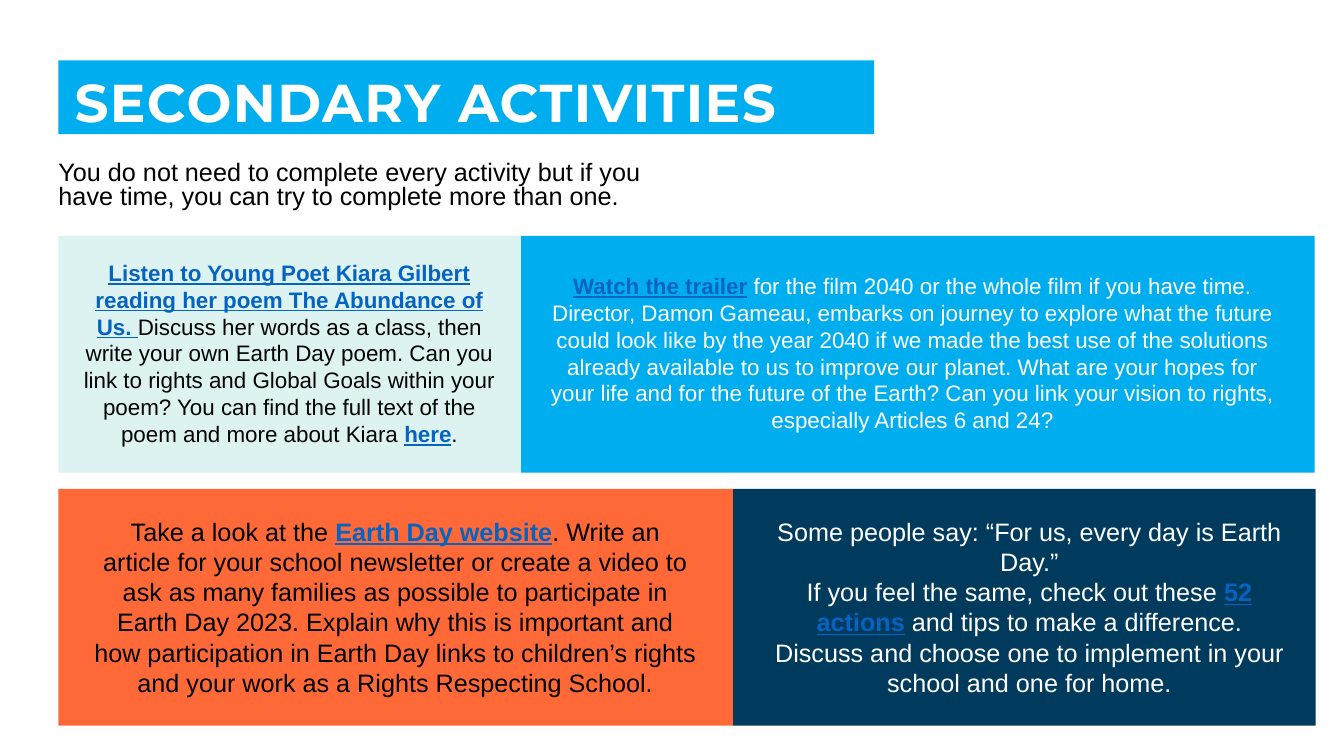
import pptx
import pptx.util
import pptx.dml.color
import pptx.enum.shapes
import pptx.enum.text
import pptx.oxml.ns
import lxml.etree

PX = 9144  # EMU per px, 100 px to the inch
HUES = {
    "sky": "00AEEF", "mint": "DDF3F1", "orange": "FF6937", "navy": "003B5E",
    "link": "0563C1", "white": "FFFFFF", "black": "000000", "ink": "030303",
}


def hue(name):
    return pptx.dml.color.RGBColor.from_string(HUES[name])


def write(frame, text, font="Arial", size=18, color="black", bold=False,
          align="CENTER", line=1.0, track=0, pad=(10, 5, 10, 5), anchor="TOP"):
    """Fill a frame; each newline starts a paragraph, *stars* mark a link."""
    frame.word_wrap = True
    frame.auto_size = pptx.enum.text.MSO_AUTO_SIZE.NONE
    frame.vertical_anchor = pptx.enum.text.MSO_ANCHOR[anchor]
    (frame.margin_left, frame.margin_top,
     frame.margin_right, frame.margin_bottom) = [n * PX for n in pad]
    for i, part in enumerate(text.split("\n")):
        para = frame.paragraphs[0] if i == 0 else frame.add_paragraph()
        props = para._p.get_or_add_pPr()
        props.set("marL", "0")
        props.set("indent", "0")
        lxml.etree.SubElement(props, pptx.oxml.ns.qn("a:buNone"))
        para.alignment = pptx.enum.text.PP_ALIGN[align]
        para.line_spacing = line
        para.space_before = pptx.util.Pt(0)
        for j, words in enumerate(part.split("*")):
            if not words:
                continue
            link = j % 2 == 1
            run = para.add_run()
            run.text = words
            run.font.name = font
            run.font.size = pptx.util.Pt(size)
            run.font.bold = bold or link
            run.font.underline = link
            run.font.color.rgb = hue("link" if link else color)
            if track:
                run._r.get_or_add_rPr().set("spc", str(track * 100))


class Deck:
    def __init__(self):
        self.show = pptx.Presentation()
        self.show.slide_width = pptx.util.Inches(13.33)
        self.show.slide_height = pptx.util.Inches(7.5)
        self.slide = self.show.slides.add_slide(self.show.slide_layouts[1])

    def holder(self, index, box, text, fill=None, **style):
        item = self.slide.placeholders[index]
        item.left, item.top, item.width, item.height = [n * PX for n in box]
        if fill:
            item.fill.solid()
            item.fill.fore_color.rgb = hue(fill)
        write(item.text_frame, text, **style)

    def panel(self, box, fill):
        kind = pptx.enum.shapes.MSO_SHAPE.RECTANGLE
        item = self.slide.shapes.add_shape(kind, *[n * PX for n in box])
        item.shadow.inherit = False
        item.fill.solid()
        item.fill.fore_color.rgb = hue(fill)
        item.line.fill.background()

    def label(self, box, text, **style):
        item = self.slide.shapes.add_textbox(*[n * PX for n in box])
        write(item.text_frame, text, **style)


LEFT, HIGH = 58, 235
TOP, LOW = 234, 485

# Panel left, top, width, fill; label box; text size, colour and words
CARDS = [
    (LEFT, TOP, 459, "mint", (71, 252, 432, 199), 16, "ink",
     "*Listen to Young Poet Kiara Gilbert reading her poem The Abundance of "
     "Us. *Discuss her words as a class, then write your own Earth Day poem. "
     "Can you link to rights and Global Goals within your poem? You can find "
     "the full text of the poem and more about Kiara *here*."),
    (LEFT, LOW, 669, "orange", (83, 507, 618, 192), 18, "black",
     "Take a look at the *Earth Day website*. Write an article for your "
     "school newsletter or create a video to ask as many families as possible "
     "to participate in Earth Day 2023. Explain why this is important and how "
     "participation in Earth Day links to children’s rights and your work as "
     "a Rights Respecting School."),
    (517, TOP, 787, "sky", (530, 265, 750, 190), 16, "white",
     "*Watch the trailer* for the film 2040 or the whole film if you have "
     "time. Director, Damon Gameau, embarks on journey to explore what the "
     "future could look like by the year 2040 if we made the best use of the "
     "solutions already available to us to improve our planet. What are your "
     "hopes for your life and for the future of the Earth? Can you link your "
     "vision to rights, especially Articles 6 and 24?"),
    (727, LOW, 578, "navy", (753, 507, 536, 192), 18, "white",
     "Some people say: “For us, every day is Earth Day.”\n"
     "If you feel the same, check out these *52 actions* and tips to make a "
     "difference. Discuss and choose one to implement in your school and one "
     "for home."),
]


def main():
    deck = Deck()

    # Heading and intro
    deck.holder(0, (LEFT, 60, 809, 73), "SECONDARY ACTIVITIES", fill="sky",
                font="Montserrat", size=38, color="white", bold=True,
                align="LEFT", line=0.9, track=1, pad=(16, 16, 12, 0),
                anchor="MIDDLE")
    deck.holder(1, (LEFT, 156, 621, 62),
                "You do not need to complete every activity but if you have "
                "time, you can try to complete more than one.",
                align="LEFT", line=0.8, pad=(0, 5, 10, 5))

    # Activity cards
    for left, top, wide, fill, box, size, color, text in CARDS:
        deck.panel((left, top, wide, HIGH), fill)
        deck.label(box, text, size=size, color=color)

    deck.show.save("out.pptx")


if __name__ == "__main__":
    main()
